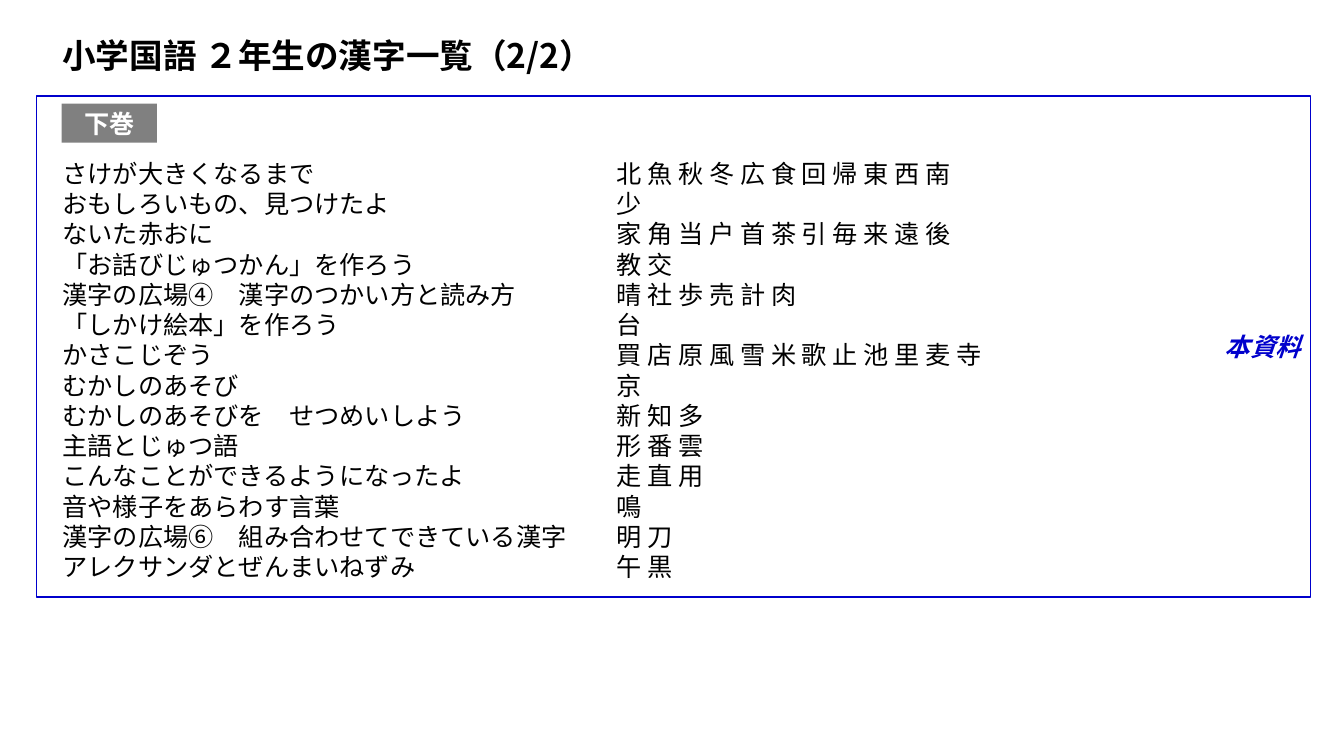
import pptx
import pptx.dml.color
import pptx.enum.shapes
import pptx.enum.text
import pptx.util
from lxml import etree

Pt = pptx.util.Pt
RGBColor = pptx.dml.color.RGBColor
ALIGN = pptx.enum.text.PP_ALIGN
ANCHOR = pptx.enum.text.MSO_ANCHOR

BLACK = RGBColor(0x00, 0x00, 0x00)
WHITE = RGBColor(0xFF, 0xFF, 0xFF)
GRAY = RGBColor(0x80, 0x80, 0x80)
BLUE = RGBColor(0x00, 0x00, 0xCC)

KANJI_COLUMN = 396
UNITS = [
    ("さけが大きくなるまで", "北魚秋冬広食回帰東西南"),
    ("おもしろいもの、見つけたよ", "少"),
    ("ないた赤おに", "家角当戸首茶引毎来遠後"),
    ("「お話びじゅつかん」を作ろう", "教交"),
    ("漢字の広場④　漢字のつかい方と読み方", "晴社歩売計肉"),
    ("「しかけ絵本」を作ろう", "台"),
    ("かさこじぞう", "買店原風雪米歌止池里麦寺"),
    ("むかしのあそび", "京"),
    ("むかしのあそびを　せつめいしよう", "新知多"),
    ("主語とじゅつ語", "形番雲"),
    ("こんなことができるようになったよ", "走直用"),
    ("音や様子をあらわす言葉", "鳴"),
    ("漢字の広場⑥　組み合わせてできている漢字", "明刀"),
    ("アレクサンダとぜんまいねずみ", "午黒"),
]


class SlideBuilder:
    font = "Noto Sans CJK JP"

    def __init__(self, slide):
        self.s = slide

    def fill_text(self, tf, lines, size=18, color=BLACK, bold=False, italic=False,
                  align=ALIGN.LEFT, anchor=ANCHOR.TOP, spacing=None, tab=None):
        tf.word_wrap = True
        tf.vertical_anchor = anchor
        for i, line in enumerate(lines):
            p = tf.add_paragraph() if i else tf.paragraphs[0]
            p.alignment = align
            if spacing:
                p.line_spacing = Pt(spacing)
            if tab:
                self.add_tab_stop(p, tab)
            r = p.add_run()
            r.text = line
            r.font.name = self.font
            r.font.size = Pt(size)
            r.font.bold = bold
            r.font.italic = italic
            r.font.color.rgb = color
            ea = etree.SubElement(r.font._element, pptx.oxml.ns.qn("a:ea"))
            ea.set("typeface", self.font)

    def add_tab_stop(self, p, pos):
        qn = pptx.oxml.ns.qn
        tabs = etree.SubElement(p._p.get_or_add_pPr(), qn("a:tabLst"))
        etree.SubElement(tabs, qn("a:tab"), pos=str(Pt(pos)), algn="l")

    def text(self, x, y, w, h, lines, **fmt):
        sp = self.s.shapes.add_textbox(Pt(x), Pt(y), Pt(w), Pt(h))
        self.fill_text(sp.text_frame, lines, **fmt)

    def box(self, x, y, w, h, label, fill=None, line=None, **fmt):
        sp = self.s.shapes.add_shape(
            pptx.enum.shapes.MSO_SHAPE.RECTANGLE, Pt(x), Pt(y), Pt(w), Pt(h))
        sp.shadow.inherit = False
        if fill is None:
            sp.fill.background()
        else:
            sp.fill.solid()
            sp.fill.fore_color.rgb = fill
        if line is None:
            sp.line.fill.background()
        else:
            sp.line.color.rgb = line
            sp.line.width = Pt(1)
        self.fill_text(sp.text_frame, [label], bold=True, anchor=ANCHOR.MIDDLE, **fmt)


def main():
    prs = pptx.Presentation()
    prs.slide_width, prs.slide_height = Pt(960), Pt(540)
    b = SlideBuilder(prs.slides.add_slide(prs.slide_layouts[6]))

    b.text(37.5, 109.5, 688, 312.5,
           [f"{unit}\t{' '.join(kanji)}" for unit, kanji in UNITS],
           spacing=21.6, tab=KANJI_COLUMN)
    b.text(37.5, 21.5, 698, 36, ["小学国語 ２年生の漢字一覧（2/2）"], size=24, bold=True)
    b.box(44, 74, 68, 28, "下巻", fill=GRAY, color=WHITE, align=ALIGN.CENTER)
    b.box(26, 68.5, 910, 358, "本資料", line=BLUE, color=BLUE, italic=True,
          align=ALIGN.RIGHT)
    prs.save("out.pptx")


if __name__ == "__main__":
    main()
